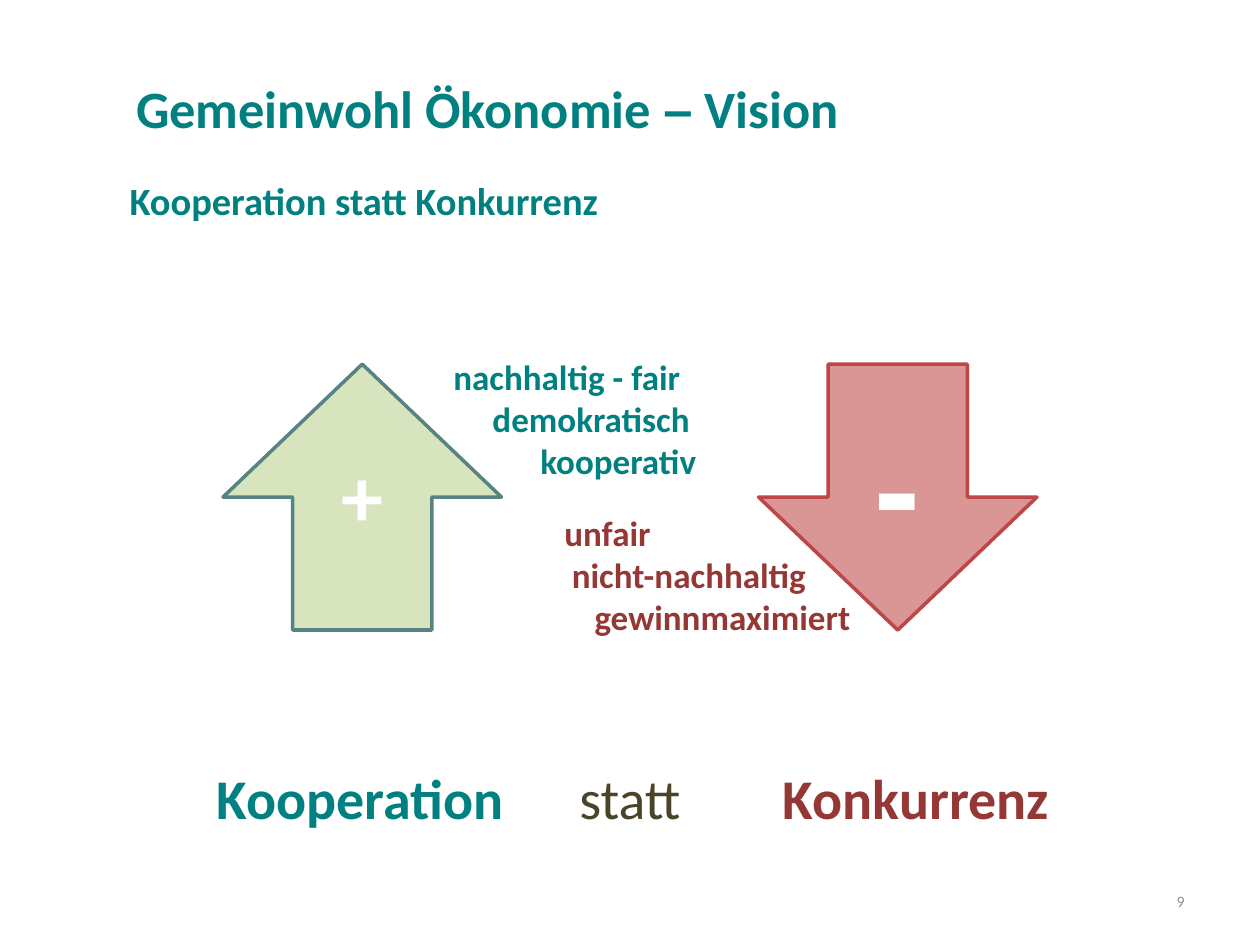
from pptx import Presentation
from pptx.dml.color import RGBColor
from pptx.enum.shapes import MSO_SHAPE as Preset
from pptx.enum.text import MSO_ANCHOR as Anchor, PP_ALIGN as Align
from pptx.util import Inches, Pt

TEAL, RED, OLIVE, GREY, WHITE = "008080", "953735", "4A452A", "8C8C8C", "FFFFFF"

TITLE = [("Gemeinwohl Ökonomie ", "Calibri"), ("–", "Arial"), (" Vision", "Calibri")]
SUBTITLE = "Kooperation statt Konkurrenz"
# text, colour, indent in inches, space before in points
VALUES = [
    ("nachhaltig - fair", TEAL, 0.06, 0),
    ("demokratisch", TEAL, 0.37, 0),
    ("kooperativ", TEAL, 0.75, 0),
    ("unfair", RED, 0.94, 17),
    ("nicht-nachhaltig", RED, 1.0, 0),
    ("gewinnmaximiert", RED, 1.18, 0),
]
# preset, left, fill, line, sign, font, size, top and bottom inset
ARROWS = [
    (Preset.UP_ARROW, 1.77, "D7E4BD", "578483", "+", "Calibri", 48, 0.05, 0.62),
    (Preset.DOWN_ARROW, 6.02, "D99694", "BE4646", "-", "DejaVu Sans Mono", 66, 0.45, 0.05),
]
ARROW_TOP, ARROW_WIDTH, ARROW_HEIGHT = 2.89, 2.21, 2.11
# text, colour, bold, centre in inches
CLOSING = [
    ("Kooperation", TEAL, True, 2.86),
    ("statt", OLIVE, False, 5.0),
    ("Konkurrenz", RED, True, 7.27),
]


def rgb(value):
    return RGBColor.from_string(value)


def add_run(paragraph, text, size, color, bold=True, font="Calibri"):
    run = paragraph.add_run()
    run.text = text
    run.font.name, run.font.size, run.font.bold = font, Pt(size), bold
    run.font.color.rgb = rgb(color)


def place(shape, left, top, width, height):
    shape.left, shape.top = Inches(left), Inches(top)
    shape.width, shape.height = Inches(width), Inches(height)


def add_box(slide, left, top, width, height, anchor=Anchor.MIDDLE):
    box = slide.shapes.add_textbox(*map(Inches, (left, top, width, height)))
    frame = box.text_frame
    frame.word_wrap, frame.vertical_anchor = True, anchor
    return frame


def add_line(slide, position, text, align=Align.LEFT, **style):
    """Add a text box that holds a single formatted line."""
    paragraph = add_box(slide, *position).paragraphs[0]
    paragraph.alignment = align
    add_run(paragraph, text, **style)


def add_title(slide):
    title = slide.shapes.title
    place(title, 0.98, 0.23, 8.8, 1.25)
    title.text_frame.vertical_anchor = Anchor.MIDDLE
    paragraph = title.text_frame.paragraphs[0]
    paragraph.alignment = Align.LEFT
    for text, font in TITLE:
        add_run(paragraph, text, 30, TEAL, font=font)


def add_arrow(slide, preset, left, fill, line, sign, font, size, inset_top, inset_bottom):
    position = left, ARROW_TOP, ARROW_WIDTH, ARROW_HEIGHT
    arrow = slide.shapes.add_shape(preset, *map(Inches, position))
    arrow.shadow.inherit = False
    arrow.fill.solid()
    arrow.fill.fore_color.rgb = rgb(fill)
    arrow.line.color.rgb = rgb(line)
    arrow.line.width = Pt(2)
    frame = arrow.text_frame
    frame.vertical_anchor = Anchor.MIDDLE
    frame.margin_top, frame.margin_bottom = Inches(inset_top), Inches(inset_bottom)
    frame.paragraphs[0].alignment = Align.CENTER
    add_run(frame.paragraphs[0], sign, size, WHITE, font=font)


def add_values(slide):
    frame = add_box(slide, 3.44, 2.77, 4.72, 2.69, Anchor.TOP)
    for index, (text, color, indent, space) in enumerate(VALUES):
        paragraph = frame.add_paragraph() if index else frame.paragraphs[0]
        properties = paragraph._p.get_or_add_pPr()
        properties.set("marL", str(Inches(indent)))
        paragraph.space_before = Pt(space)
        add_run(paragraph, text, 20, color)


def main():
    presentation = Presentation()
    presentation.slide_width, presentation.slide_height = Inches(10), Inches(7.5)
    slide = presentation.slides.add_slide(presentation.slide_layouts[5])
    add_title(slide)
    add_line(slide, (0.93, 1.34, 8.55, 0.5), SUBTITLE, size=22, color=TEAL)
    for arrow in ARROWS:
        add_arrow(slide, *arrow)
    add_values(slide)
    for text, color, bold, center in CLOSING:
        add_line(slide, (center - 1.3, 5.98, 2.6, 0.7), text, Align.CENTER,
                 size=32, color=color, bold=bold)
    add_line(slide, (7.17, 6.95, 2.33, 0.4), "9", Align.RIGHT,
             size=9, color=GREY, bold=False)
    presentation.save("out.pptx")


if __name__ == "__main__":
    main()
